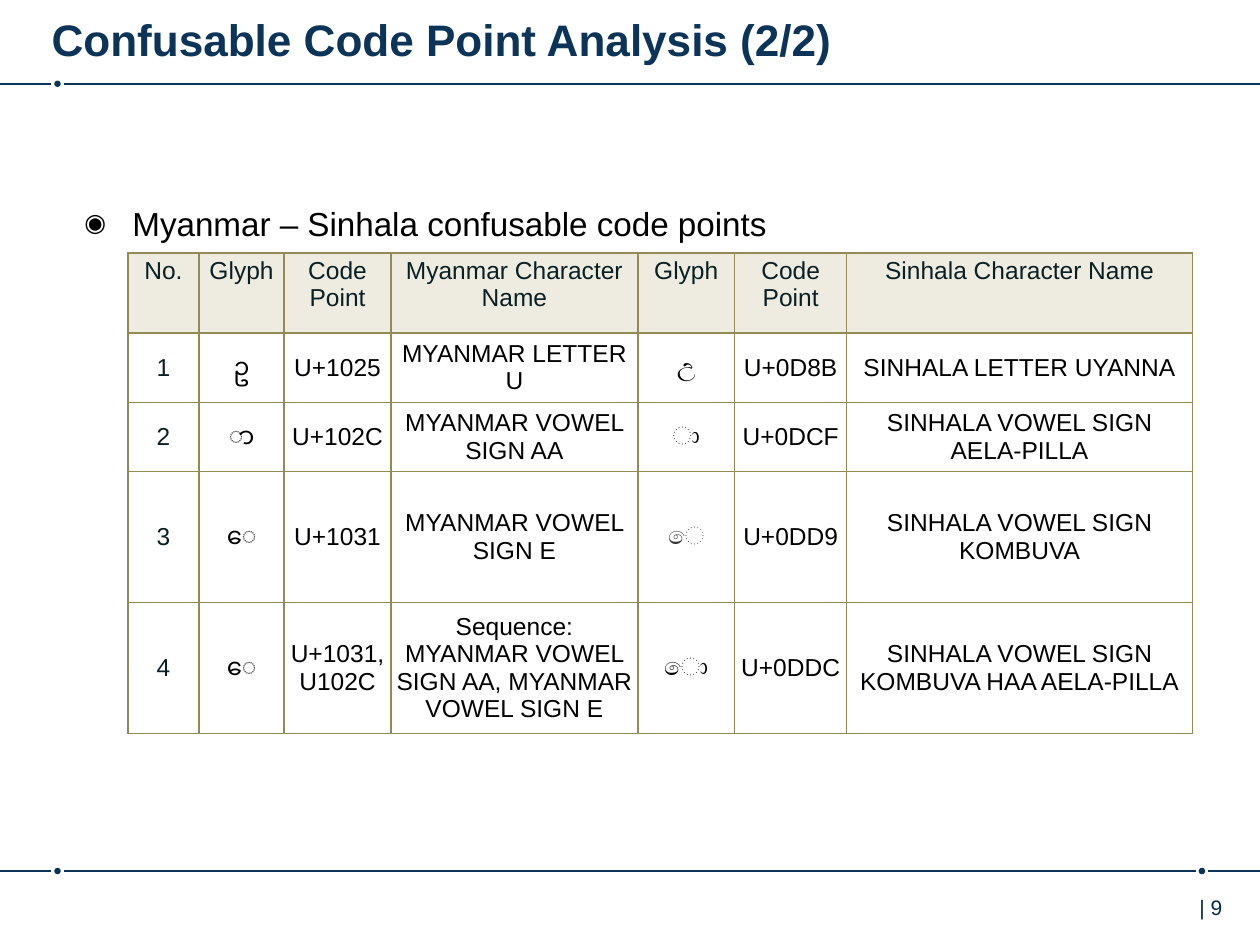
from lxml import etree
from pptx import Presentation
from pptx.dml.color import RGBColor
from pptx.enum.shapes import MSO_CONNECTOR, MSO_SHAPE
from pptx.enum.text import MSO_ANCHOR, PP_ALIGN
from pptx.oxml.ns import qn
from pptx.util import Cm, Pt

STRAIGHT = MSO_CONNECTOR.STRAIGHT
OVAL = MSO_SHAPE.OVAL
TOP, MIDDLE = MSO_ANCHOR.TOP, MSO_ANCHOR.MIDDLE
LEFT, CENTER = PP_ALIGN.LEFT, PP_ALIGN.CENTER

FONT = "Arial"
COLORS = {
    "navy": "0C3458",
    "page": "002B49",
    "ink": "0A1F24",
    "black": "000000",
    "gray": "333333",
    "header": "EEECE1",
    "border": "948A54",
}

# Sizes in centimetres
SLIDE_WIDTH, SLIDE_HEIGHT = 25.4, 19.05
DOT_SIZE, DOT_GAP = 0.13, 0.13
LEFT_DOT, RIGHT_DOT = 1.16, 24.23
COLUMN_WIDTHS = [1.43, 1.72, 2.15, 4.98, 1.95, 2.26, 6.97]
ROW_HEIGHTS = [1.61, 1.4, 1.4, 2.64, 2.64]
CELL_MARGIN = 0.08

HEADERS = ["No.", "Glyph", "Code Point", "Myanmar Character Name",
           "Glyph", "Code Point", "Sinhala Character Name"]
# A line break inside an entry starts a new paragraph
CONFUSABLES = [
    ["1", "ဥ", "U+1025", "MYANMAR LETTER U",
     "උ", "U+0D8B", "SINHALA LETTER UYANNA"],
    ["2", "ာ", "U+102C", "MYANMAR VOWEL SIGN AA",
     "ා", "U+0DCF", "SINHALA VOWEL SIGN AELA-PILLA"],
    ["3", "ေ", "U+1031", "MYANMAR VOWEL SIGN E",
     "ෙ", "U+0DD9", "SINHALA VOWEL SIGN KOMBUVA"],
    ["4", "ော", "U+1031,\nU102C",
     "Sequence:\nMYANMAR VOWEL SIGN AA, MYANMAR VOWEL SIGN E",
     "ො", "U+0DDC", "SINHALA VOWEL SIGN KOMBUVA HAA AELA-PILLA"],
]
GRAY_GLYPH = "ෙ"


def rgb(name):
    return RGBColor.from_string(COLORS[name])


def add_run(paragraph, text, size, color, bold=False):
    run = paragraph.add_run()
    run.text = text
    run.font.name = FONT
    run.font.size = Pt(size)
    run.font.bold = bold
    run.font.color.rgb = rgb(color)


def add_text(slide, box, text, size, color, margins=(0, 0), bold=False):
    """Place one line of text; margins are (horizontal, vertical)."""
    frame = slide.shapes.add_textbox(*map(Cm, box)).text_frame
    frame.word_wrap = True
    frame.vertical_anchor = TOP
    frame.margin_left = frame.margin_right = Cm(margins[0])
    frame.margin_top = frame.margin_bottom = Cm(margins[1])
    paragraph = frame.paragraphs[0]
    paragraph.alignment = LEFT
    add_run(paragraph, text, size, color, bold)
    return paragraph


def set_bullet(paragraph, character, indent):
    properties = paragraph._p.get_or_add_pPr()
    properties.set("marL", str(Cm(indent)))
    properties.set("indent", str(-Cm(indent)))
    bullet_color = etree.SubElement(properties, qn("a:buClr"))
    etree.SubElement(bullet_color, qn("a:srgbClr"), val=COLORS["black"])
    etree.SubElement(properties, qn("a:buSzPct"), val="75000")
    etree.SubElement(properties, qn("a:buFont"), typeface=FONT)
    etree.SubElement(properties, qn("a:buChar"), char=character)


def add_line(slide, start, end, y):
    line = slide.shapes.add_connector(STRAIGHT, Cm(start), Cm(y), Cm(end), Cm(y))
    line.line.color.rgb = rgb("navy")
    line.line.width = Pt(1)
    etree.SubElement(line._element.spPr, qn("a:effectLst"))


def add_dotted_rule(slide, y, dots):
    """Draw a full-width rule that is interrupted by dots."""
    start = 0
    for center in dots:
        add_line(slide, start, center - DOT_GAP, y)
        dot = slide.shapes.add_shape(
            OVAL, Cm(center - DOT_SIZE / 2), Cm(y - DOT_SIZE / 2),
            Cm(DOT_SIZE), Cm(DOT_SIZE))
        dot.shadow.inherit = False
        dot.fill.solid()
        dot.fill.fore_color.rgb = rgb("navy")
        dot.line.fill.background()
        start = center + DOT_GAP
    add_line(slide, start, SLIDE_WIDTH, y)


def set_borders(cell):
    properties = cell._tc.get_or_add_tcPr()
    for index, side in enumerate(("lnL", "lnR", "lnT", "lnB")):
        border = etree.Element(qn(f"a:{side}"), w=str(Pt(1)))
        fill = etree.SubElement(border, qn("a:solidFill"))
        etree.SubElement(fill, qn("a:srgbClr"), val=COLORS["border"])
        properties.insert(index, border)


def fill_cell(cell, text, color, is_header):
    cell.margin_left = cell.margin_right = Cm(CELL_MARGIN)
    cell.margin_top = cell.margin_bottom = Cm(CELL_MARGIN)
    cell.vertical_anchor = TOP if is_header else MIDDLE
    if is_header:
        cell.fill.solid()
        cell.fill.fore_color.rgb = rgb("header")
    else:
        cell.fill.background()
    set_borders(cell)
    frame = cell.text_frame
    for index, line in enumerate(text.split("\n")):
        paragraph = frame.add_paragraph() if index else frame.paragraphs[0]
        paragraph.alignment = CENTER
        add_run(paragraph, line, 14, color)


def cell_color(row, column, text):
    if row == 0 or column == 0:
        return "ink"
    return "gray" if text == GRAY_GLYPH else "black"


def add_code_point_table(slide, left, top):
    rows = [HEADERS] + CONFUSABLES
    table = slide.shapes.add_table(
        len(rows), len(HEADERS), Cm(left), Cm(top),
        Cm(sum(COLUMN_WIDTHS)), Cm(sum(ROW_HEIGHTS))).table
    table.first_row = table.horz_banding = False
    for column, width in zip(table.columns, COLUMN_WIDTHS):
        column.width = Cm(width)
    for row, height in zip(table.rows, ROW_HEIGHTS):
        row.height = Cm(height)
    for r, entries in enumerate(rows):
        for c, text in enumerate(entries):
            fill_cell(table.cell(r, c), text, cell_color(r, c, text), r == 0)


def main():
    presentation = Presentation()
    presentation.slide_width = Cm(SLIDE_WIDTH)
    presentation.slide_height = Cm(SLIDE_HEIGHT)
    slide = presentation.slides.add_slide(presentation.slide_layouts[6])

    # Rules and page number
    add_dotted_rule(slide, 1.69, [LEFT_DOT])
    add_dotted_rule(slide, 17.56, [LEFT_DOT, RIGHT_DOT])
    add_text(slide, (23.93, 17.91, 1.4, 1.02), "| 9", 12, "page", (0.25, 0.13))

    # Title and bullet
    add_text(slide, (1.04, 0.13, 22.25, 1.24),
             "Confusable Code Point Analysis (2/2)", 25.2, "navy", (0, 0.13), bold=True)
    bullet = add_text(slide, (1.7, 4.09, 21.97, 0.9),
                      "Myanmar – Sinhala confusable code points", 19, "black")
    set_bullet(bullet, "◉", 0.97)

    # Confusable code points
    add_code_point_table(slide, 2.58, 5.1)

    presentation.save("out.pptx")


if __name__ == "__main__":
    main()
